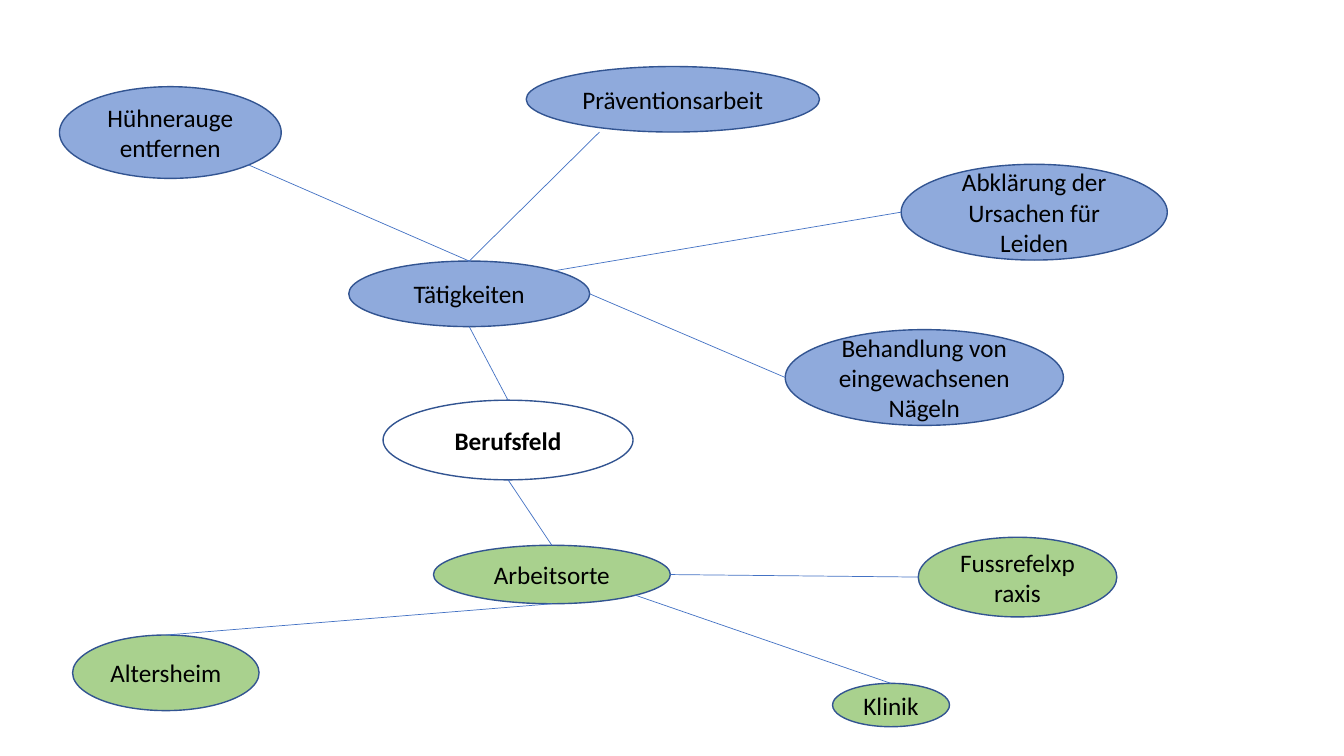
from dataclasses import dataclass

from lxml.etree import SubElement
from pptx import Presentation
from pptx.dml.color import RGBColor
from pptx.enum.shapes import MSO_CONNECTOR, MSO_SHAPE
from pptx.enum.text import MSO_ANCHOR, PP_ALIGN
from pptx.oxml.ns import qn
from pptx.util import Inches, Pt


@dataclass(frozen=True)
class Theme:
    center: RGBColor = RGBColor(0xFF, 0xFF, 0xFF)
    task: RGBColor = RGBColor(0x8F, 0xAA, 0xDC)
    place: RGBColor = RGBColor(0xA9, 0xD1, 0x8E)
    outline: RGBColor = RGBColor(0x32, 0x54, 0x91)
    link: RGBColor = RGBColor(0x44, 0x72, 0xC4)
    text: RGBColor = RGBColor(0, 0, 0)
    font: str = "Calibri"
    size: Pt = Pt(18)
    outline_width: Pt = Pt(1)
    link_width: Pt = Pt(0.5)


CELL = Inches(0.1)  # side of one grid column and row
COLUMNS, ROWS = 133.33, 75

# Points on a bubble, as shares of its width and height
NEAR, FAR = 0.15, 0.85
ANCHORS = {
    "top": (0.5, 0),
    "bottom": (0.5, 1),
    "left": (0, 0.5),
    "right": (1, 0.5),
    "top right": (FAR, NEAR),
    "bottom right": (FAR, FAR),
    "below left": (0.25, 1),
}

# Text, kind, then left, top, width and height in grid cells
BUBBLES = [
    ("Berufsfeld", "center", (38, 39.7, 24.8, 7.9)),
    ("Tätigkeiten", "task", (34.6, 25.9, 23.9, 6.5)),
    ("Hühnerauge entfernen", "task", (5.9, 8.6, 22, 9.1)),
    ("Behandlung von eingewachsenen Nägeln", "task", (77.9, 32.7, 27.6, 9.5)),
    ("Abklärung der Ursachen für Leiden", "task", (89.4, 16.3, 26.4, 9.5)),
    ("Präventionsarbeit", "task", (52.2, 6.6, 29.1, 6.5)),
    ("Arbeitsorte", "place", (43, 54.1, 23.5, 5.8)),
    ("Fussrefelxpraxis", "place", (91.1, 53.3, 19.7, 7.9)),
    ("Klinik", "place", (82.6, 67.8, 11.6, 4.3)),
    ("Altersheim", "place", (7.2, 63, 18.5, 7.5)),
]

LINKS = [
    ("Tätigkeiten", "bottom", "Berufsfeld", "top"),
    ("Hühnerauge entfernen", "bottom right", "Tätigkeiten", "top"),
    ("Präventionsarbeit", "below left", "Tätigkeiten", "top"),
    ("Tätigkeiten", "right", "Behandlung von eingewachsenen Nägeln", "left"),
    ("Abklärung der Ursachen für Leiden", "left", "Tätigkeiten", "top right"),
    ("Berufsfeld", "bottom", "Arbeitsorte", "top"),
    ("Arbeitsorte", "right", "Fussrefelxpraxis", "left"),
    ("Arbeitsorte", "bottom right", "Klinik", "top"),
    ("Arbeitsorte", "bottom", "Altersheim", "top"),
]


def apply(target, values):
    for name, value in values.items():
        setattr(target, name, value)


def anchor_point(shape, anchor):
    x, y = ANCHORS[anchor]
    return (round(shape.left + x * shape.width),
            round(shape.top + y * shape.height))


class MindMap:
    def __init__(self, slide, theme):
        self.slide, self.theme = slide, theme

    def bubble(self, text, kind, box):
        th = self.theme
        sp = self.slide.shapes.add_shape(
            MSO_SHAPE.OVAL, *(round(n * CELL) for n in box))
        sp.shadow.inherit = False
        sp.fill.solid()
        sp.fill.fore_color.rgb = getattr(th, kind)
        sp.line.color.rgb = th.outline
        sp.line.width = th.outline_width
        tf = sp.text_frame
        apply(tf, {"word_wrap": True, "vertical_anchor": MSO_ANCHOR.MIDDLE})
        p = tf.paragraphs[0]
        p.alignment = PP_ALIGN.CENTER
        r = p.add_run()
        r.text = text
        apply(r.font, {"name": th.font, "size": th.size,
                       "bold": kind == "center"})
        r.font.color.rgb = th.text
        return sp

    def link(self, start, start_anchor, end, end_anchor):
        cxn = self.slide.shapes.add_connector(
            MSO_CONNECTOR.STRAIGHT,
            *anchor_point(start, start_anchor), *anchor_point(end, end_anchor))
        cxn.line.color.rgb = self.theme.link
        cxn.line.width = self.theme.link_width
        SubElement(cxn._element.spPr, qn("a:effectLst"))


def main():
    prs = Presentation()
    apply(prs, {"slide_width": round(COLUMNS * CELL),
                "slide_height": ROWS * CELL})
    s = prs.slides.add_slide(prs.slide_layouts[6])
    mind_map = MindMap(s, Theme())
    bubbles = {text: mind_map.bubble(text, kind, box)
               for text, kind, box in BUBBLES}
    for start, start_anchor, end, end_anchor in LINKS:
        mind_map.link(bubbles[start], start_anchor, bubbles[end], end_anchor)
    prs.save("out.pptx")


if __name__ == "__main__":
    main()
